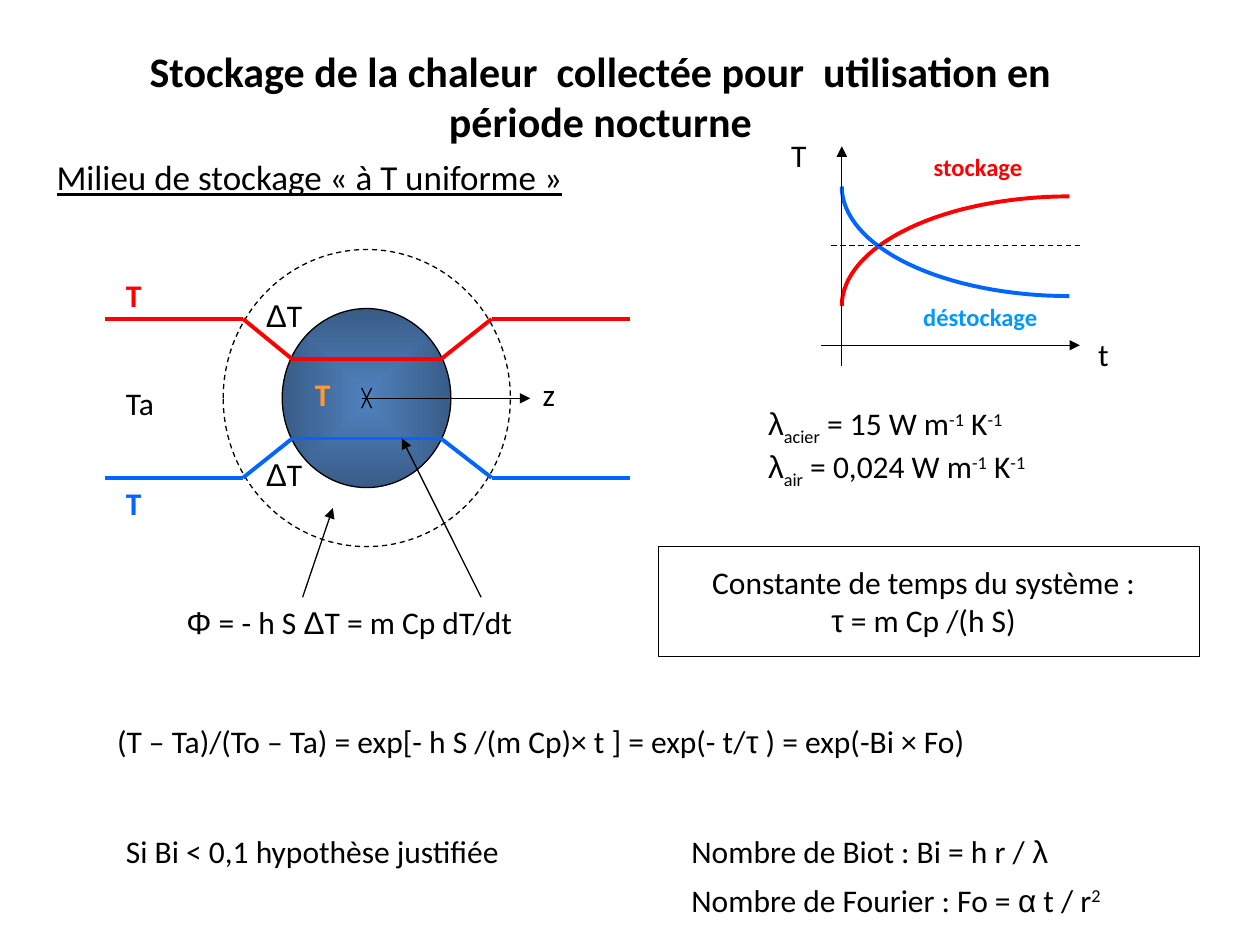
from dataclasses import dataclass
from itertools import pairwise
from math import cos, pi, sin
from typing import NamedTuple

from lxml.etree import SubElement as Sub
from pptx import Presentation as Deck
from pptx.dml.color import RGBColor as Rgb
from pptx.enum.dml import MSO_LINE as Dash
from pptx.enum.shapes import MSO_CONNECTOR as Link, MSO_SHAPE as Kind
from pptx.enum.text import MSO_AUTO_SIZE as Fit, PP_ALIGN as Align
from pptx.oxml.ns import qn
from pptx.util import Cm, Pt


@dataclass(frozen=True)
class Theme:
    black: str = "000000"
    red: str = "FF0000"
    blue: str = "0066FF"
    sky: str = "0099FF"
    gold: str = "FF9933"
    core: str = "4F81BD"
    rim: str = "395C87"
    face: str = "Calibri"
    greek: str = "Arial"
    title: int = 24
    head: int = 20
    body: int = 18
    small: int = 14
    thin: float = 0.75
    thick: float = 2.25


LOOK = Theme()


class Run(NamedTuple):
    text: str
    face: str = LOOK.face
    base: int = 0


class Spot(NamedTuple):
    x: float
    y: float


@dataclass(frozen=True)
class Label:
    x: float
    y: float
    wide: float
    lines: list[list[Run]]
    tall: float = 1.02
    size: int = LOOK.body
    color: str = LOOK.black
    bold: bool = False
    under: bool = False
    mid: bool = False
    wrap: bool = False


@dataclass(frozen=True)
class Line:
    start: Spot
    end: Spot
    color: str = LOOK.black
    width: float = LOOK.thin
    arrow: bool = False
    dash: bool = False


def greek(text: str) -> Run:
    return Run(text, LOOK.greek)


def power(text: str) -> Run:
    return Run(text, base=30)


def stroke(line, color: str, width: float, dash: bool = False) -> None:
    line.color.rgb = Rgb.from_string(color)
    line.width = Pt(width)
    if dash:
        line.dash_style = Dash.DASH


def draw_line(shapes, item: Line) -> None:
    ends = [Cm(v) for v in (*item.start, *item.end)]
    link = shapes.add_connector(Link.STRAIGHT, *ends)
    stroke(link.line, item.color, item.width, item.dash)
    props = link._element.spPr
    if item.arrow:
        Sub(props.find(qn("a:ln")), qn("a:tailEnd"), type="triangle")
    Sub(props, qn("a:effectLst"))


def draw_shape(shapes, kind: Kind, x: float, y: float, wide: float, tall: float,
               dash: bool = False):
    shape = shapes.add_shape(kind, Cm(x), Cm(y), Cm(wide), Cm(tall))
    shape.shadow.inherit = False
    shape.fill.background()
    stroke(shape.line, LOOK.black, LOOK.thin, dash)
    return shape


def shade(shape) -> None:
    shape.fill.gradient()
    for stop, color in zip(shape.fill.gradient_stops, (LOOK.core, LOOK.rim)):
        stop.color.rgb = Rgb.from_string(color)
    grad = shape._element.spPr.find(qn("a:gradFill"))
    grad.remove(grad.find(qn("a:lin")))
    glow = Sub(grad, qn("a:path"))
    glow.set("path", "shape")
    Sub(glow, qn("a:fillToRect"), {side: "50000" for side in "ltrb"})


def draw_trace(shapes, color: str, outer: float, inner: float) -> None:
    stops = (2.11, 4.9, 5.89, 8.89, 9.91, 12.7)
    highs = (outer, outer, inner, inner, outer, outer)
    for start, end in pairwise(map(Spot, stops, highs)):
        draw_line(shapes, Line(start, end, color, LOOK.thick))


def draw_curve(shapes, color: str, start: float, end: float) -> None:
    left, right, steps = 16.97, 21.56, 32
    turns = [pi / 2 * n / steps for n in range(steps + 1)]
    spots = [(Cm(right - (right - left) * cos(a)),
              Cm(start + (end - start) * sin(a))) for a in turns]
    path = shapes.build_freeform(*spots[0])
    path.add_line_segments(spots[1:], close=False)
    curve = path.convert_to_shape()
    curve.shadow.inherit = False
    curve.fill.background()
    stroke(curve.line, color, LOOK.thick)


def draw_label(shapes, item: Label) -> None:
    box = shapes.add_textbox(Cm(item.x), Cm(item.y), Cm(item.wide), Cm(item.tall))
    frame = box.text_frame
    frame.word_wrap = item.wrap
    frame.auto_size = Fit.SHAPE_TO_FIT_TEXT
    for n, runs in enumerate(item.lines):
        para = frame.add_paragraph() if n else frame.paragraphs[0]
        para.alignment = Align.CENTER if item.mid else Align.LEFT
        for part in runs:
            run = para.add_run()
            run.text = part.text
            font = run.font
            font.name, font.size = part.face, Pt(item.size)
            font.bold, font.underline = item.bold, item.under
            font.color.rgb = Rgb.from_string(item.color)
            if part.base:
                run._r.get_or_add_rPr().set("baseline", str(part.base * 1000))


def metal(name: str, value: str) -> list[Run]:
    return [Run(" "), greek("λ"), Run(name, base=-25), Run(f" = {value} W m"),
            power("-1"), Run(" K"), power("-1")]


DELTA = [[greek("Δ"), Run("T")]]
TEMP = [[Run("T")]]

LINES = [
    Line(Spot(7.29, 8.03), Spot(10.69, 8.03), arrow=True),
    Line(Spot(7.49, 7.82), Spot(7.29, 8.23)),
    Line(Spot(7.29, 7.82), Spot(7.49, 8.23)),
    Line(Spot(9.7, 12.04), Spot(8.1, 8.84), arrow=True),
    Line(Spot(6.1, 12.04), Spot(6.71, 10.24), arrow=True),
    Line(Spot(16.97, 7.37), Spot(16.97, 2.95), arrow=True),
    Line(Spot(16.56, 6.96), Spot(21.77, 6.96), arrow=True),
    Line(Spot(16.76, 4.95), Spot(21.77, 4.95), dash=True),
]

LABELS = [
    Label(0.89, 3.02, 12.27, [[Run("Milieu de stockage «\u00a0à T uniforme\u00a0»")]],
          tall=1.09, size=LOOK.head, under=True),
    Label(2.29, 5.44, 0.97, TEMP, color=LOOK.red, bold=True),
    Label(6.1, 7.44, 0.97, TEMP, color=LOOK.gold, bold=True),
    Label(2.29, 9.63, 0.97, TEMP, color=LOOK.blue, bold=True),
    Label(5.11, 5.84, 1.32, DELTA),
    Label(5.11, 9.04, 1.32, DELTA),
    Label(2.29, 7.62, 1.27, [[Run("Ta")]]),
    Label(10.69, 7.44, 0.86, [[Run("z")]]),
    Label(15.09, 8.03, 6.86, [metal("acier", "15"), metal("air", "0,024")], tall=1.78),
    Label(3.51, 12.04, 8.26, [[greek("Φ"), Run(" = - h S "), greek("Δ"),
                               Run("T = m Cp dT/dt")]]),
    Label(2.11, 14.43, 21.13, [[
        Run("(T – Ta)/(To – Ta) = exp[- h S /(m Cp)× t ] = exp(- t/"),
        greek("τ"), Run(" ) = exp(-Bi × Fo)")]]),
    Label(13.49, 11.23, 10.26, [[Run("Constante de temps du système :")],
                                [greek("τ"), Run(" = m Cp /(h S)")]],
          tall=1.78, mid=True),
    Label(13.69, 16.64, 8.94, [[Run("Nombre de Biot : Bi = h r / "), greek("λ")]]),
    Label(13.69, 17.63, 10.31, [[Run("Nombre de Fourier : Fo = "), greek("α"),
                                 Run(" t / r"), power("2")]]),
    Label(2.29, 16.64, 9.35, [[Run("Si Bi < 0,1 hypothèse justifiée")]]),
    Label(18.57, 2.95, 2.59, [[Run("stockage")]], 0.84, LOOK.small, LOOK.red, True),
    Label(18.36, 5.97, 3.15, [[Run("déstockage")]], 0.84, LOOK.small, LOOK.sky, True),
    Label(21.89, 6.63, 0.81, [[Run("t")]]),
    Label(15.7, 2.62, 0.94, TEMP),
    Label(1.78, 0.79, 20.65, [[Run(
        "Stockage de la chaleur  collectée pour  utilisation en période nocturne")]],
        tall=2.31, size=LOOK.title, bold=True, mid=True, wrap=True),
]


def main() -> None:
    deck = Deck()
    deck.slide_width, deck.slide_height = Cm(25.4), Cm(19.05)
    shapes = deck.slides.add_slide(deck.slide_layouts[6]).shapes
    shade(draw_shape(shapes, Kind.OVAL, 5.69, 6.22, 3.4, 3.61))
    draw_shape(shapes, Kind.OVAL, 4.5, 5.03, 5.79, 5.99, dash=True)
    draw_shape(shapes, Kind.RECTANGLE, 13.28, 11.02, 10.9, 2.21)
    draw_trace(shapes, LOOK.red, 6.43, 7.24)
    draw_trace(shapes, LOOK.blue, 9.63, 8.84)
    draw_curve(shapes, LOOK.red, 6.17, 3.96)
    draw_curve(shapes, LOOK.blue, 3.76, 5.97)
    for item in LINES:
        draw_line(shapes, item)
    for item in LABELS:
        draw_label(shapes, item)
    deck.save("out.pptx")


if __name__ == "__main__":
    main()
